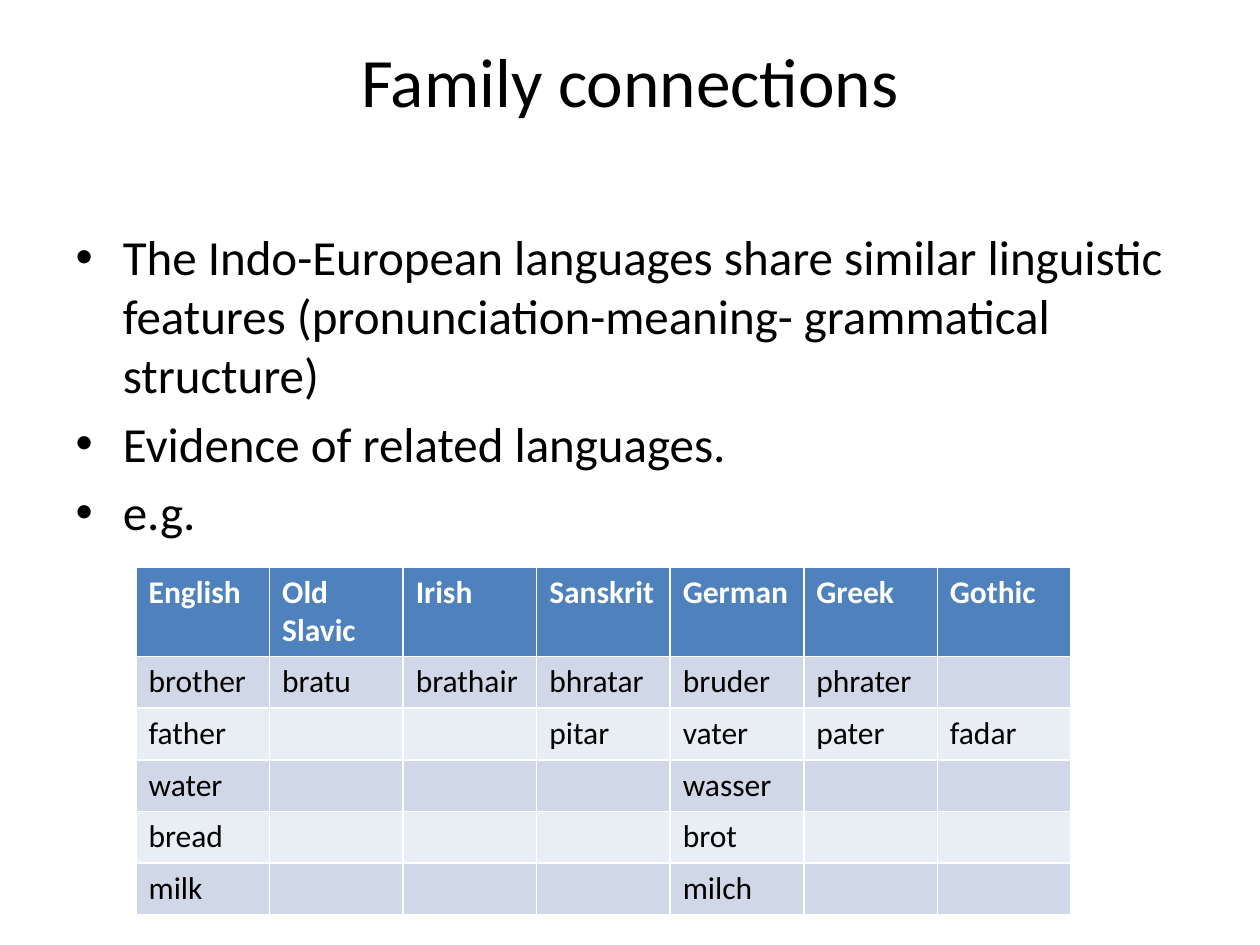
from typing import NamedTuple

from pptx import Presentation
from pptx.dml.color import RGBColor
from pptx.enum.text import MSO_ANCHOR, MSO_AUTO_SIZE, PP_ALIGN
from pptx.util import Inches, Pt

FONT = "Calibri"
COL_WIDTH, HEADER_HEIGHT, ROW_HEIGHT = 1.06, 0.7, 0.41


class RowStyle(NamedTuple):
    fill: str
    color: str
    bold: bool


HEADER = RowStyle("4F81BD", "FFFFFF", True)
BANDS = (RowStyle("D0D8E8", "000000", False), RowStyle("E9EDF4", "000000", False))

BULLETS = [
    "The Indo-European languages share similar linguistic features "
    "(pronunciation-meaning- grammatical structure)",
    "Evidence of related languages.",
    "e.g.",
]
COGNATES = [
    ["English", "Old\nSlavic", "Irish", "Sanskrit", "German", "Greek", "Gothic"],
    ["brother", "bratu", "brathair", "bhratar", "bruder", "phrater", ""],
    ["father", "", "", "pitar", "vater", "pater", "fadar"],
    ["water", "", "", "", "wasser", "", ""],
    ["bread", "", "", "", "brot", "", ""],
    ["milk", "", "", "", "milch", "", ""],
]


def rgb(value: str) -> RGBColor:
    return RGBColor.from_string(value)


def place(sp, left: float, top: float, width: float, height: float) -> None:
    sp.left, sp.top = Inches(left), Inches(top)
    sp.width, sp.height = Inches(width), Inches(height)


def format_text(tf, size: float, color: str, bold: bool = False) -> None:
    for p in tf.paragraphs:
        p.font.name, p.font.size, p.font.bold = FONT, Pt(size), bold
        p.font.color.rgb = rgb(color)


def add_title(s, text: str) -> None:
    sp = s.shapes.title
    place(sp, 0.5, 0.3, 9, 1.25)
    tf = sp.text_frame
    tf.text = text
    tf.auto_size = MSO_AUTO_SIZE.NONE
    tf.vertical_anchor = MSO_ANCHOR.TOP
    tf.margin_top = 0
    tf.paragraphs[0].alignment = PP_ALIGN.CENTER
    format_text(tf, 39.6, "000000")


def add_bullets(s, lines: list[str]) -> None:
    """Fill the body placeholder, whose layout supplies bullets and spacing."""
    sp = s.placeholders[1]
    place(sp, 0.5, 1.75, 9, 5.5)
    tf = sp.text_frame
    tf.text = "\n".join(lines)
    tf.auto_size = MSO_AUTO_SIZE.NONE
    format_text(tf, 28, "000000")


def add_word_table(s, rows: list[list[str]]) -> None:
    n_rows, n_cols = len(rows), len(rows[0])
    table = s.shapes.add_table(
        n_rows, n_cols, Inches(1.08), Inches(4.5), Inches(n_cols * COL_WIDTH),
        Inches(HEADER_HEIGHT + (n_rows - 1) * ROW_HEIGHT)).table
    for column in table.columns:
        column.width = Inches(COL_WIDTH)
    for i, words in enumerate(rows):
        style = BANDS[(i - 1) % 2] if i else HEADER
        table.rows[i].height = Inches(ROW_HEIGHT if i else HEADER_HEIGHT)
        for cell, word in zip(table.rows[i].cells, words):
            cell.fill.solid()
            cell.fill.fore_color.rgb = rgb(style.fill)
            cell.text = word
            format_text(cell.text_frame, 18, style.color, style.bold)


def main() -> None:
    prs = Presentation()
    prs.slide_width, prs.slide_height = Inches(10), Inches(7.5)
    s = prs.slides.add_slide(prs.slide_layouts.get_by_name("Title and Content"))
    add_title(s, "Family connections")
    add_bullets(s, BULLETS)
    add_word_table(s, COGNATES)
    prs.save("out.pptx")


if __name__ == "__main__":
    main()
